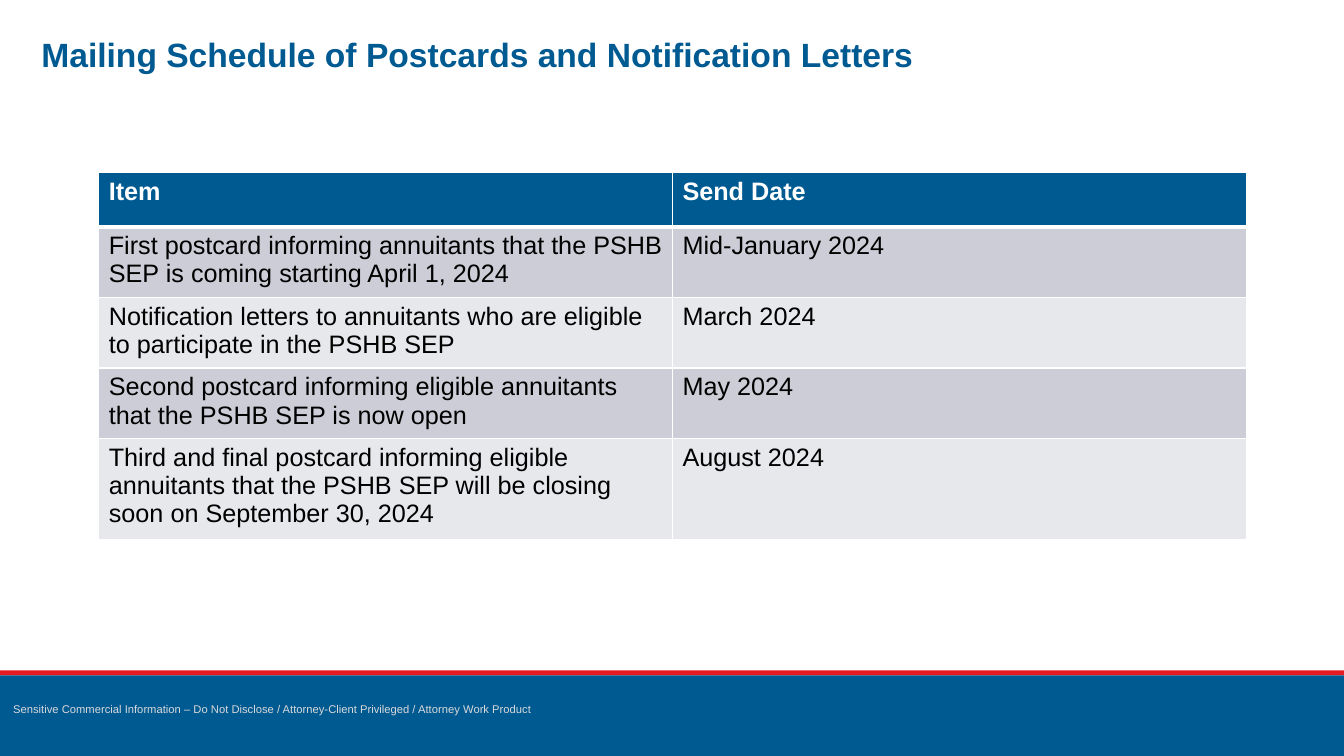
from dataclasses import dataclass

from lxml.etree import SubElement
from pptx import Presentation
from pptx.dml.color import RGBColor
from pptx.enum.shapes import MSO_SHAPE
from pptx.enum.text import MSO_ANCHOR, PP_ALIGN
from pptx.oxml.ns import qn
from pptx.util import Pt

EMU_PER_PX = 9144
SCHEDULE = [
    ("Item", "Send Date"),
    ("First postcard informing annuitants that the PSHB SEP is coming starting April 1, 2024",
     "Mid-January 2024"),
    ("Notification letters to annuitants who are eligible to participate in the PSHB SEP",
     "March 2024"),
    ("Second postcard informing eligible annuitants that the PSHB SEP is now open",
     "May 2024"),
    ("Third and final postcard informing eligible annuitants that the PSHB SEP will be closing "
     "soon on September 30, 2024", "August 2024"),
]
ROW_HEIGHTS = [54, 70, 70, 70, 100]


@dataclass(frozen=True)
class Theme:
    """Colours, font and type sizes of the slide."""

    blue: str = "005A92"
    red: str = "E71921"
    white: str = "FFFFFF"
    black: str = "000000"
    notice: str = "D9D9D9"
    bands: tuple = ("E7E8EC", "CCCDD6")
    font: str = "Arial"
    title_size: int = 24
    table_size: int = 18
    notice_size: int = 8


THEME = Theme()


def px(*lengths):
    """Turn pixel lengths into EMU."""
    return [length * EMU_PER_PX for length in lengths]


def style_text(text_frame, size, color, bold=False, line_spacing=None):
    """Format every run of a text frame."""
    for paragraph in text_frame.paragraphs:
        paragraph.alignment = PP_ALIGN.LEFT
        if line_spacing:
            paragraph.line_spacing = line_spacing
        for run in paragraph.runs:
            run.font.name = THEME.font
            run.font.size = Pt(size)
            run.font.bold = bold
            run.font.color.rgb = RGBColor.from_string(color)


def add_title(slide, left, top, width, height):
    """Place the slide title in its box."""
    title = slide.shapes.title
    title.left, title.top, title.width, title.height = px(left, top, width, height)
    frame = title.text_frame
    frame.text = "Mailing Schedule of Postcards and Notification Letters"
    frame.margin_left = frame.margin_right = frame.margin_top = frame.margin_bottom = 0
    frame.vertical_anchor = MSO_ANCHOR.MIDDLE
    style_text(frame, THEME.title_size, THEME.blue, True, 1.06)


def add_bar(slide, left, top, width, height, color):
    """Draw one plain coloured bar."""
    bar = slide.shapes.add_shape(MSO_SHAPE.RECTANGLE, *px(left, top, width, height))
    bar.shadow.inherit = False
    bar.fill.solid()
    bar.fill.fore_color.rgb = RGBColor.from_string(color)
    bar.line.fill.background()


def add_footer(slide, left, top, width, height):
    """Draw the red rule, blue band and confidentiality notice."""
    rule = 5
    add_bar(slide, left, top, width, rule, THEME.red)
    add_bar(slide, left, top + rule, width, height - rule, THEME.blue)
    notice = slide.shapes.add_textbox(*px(left, top + 23, 602, 26))
    frame = notice.text_frame
    frame.word_wrap = True
    frame.margin_left = px(13)[0]
    frame.text = ("Sensitive Commercial Information – Do Not Disclose / "
                  "Attorney-Client Privileged / Attorney Work Product")
    style_text(frame, THEME.notice_size, THEME.notice, line_spacing=1.3)


def format_cell(cell, fill, borders):
    """Give a cell its side borders and fill."""
    properties = cell._tc.get_or_add_tcPr()
    for side, points in borders.items():
        line = SubElement(properties, qn(f"a:{side}"), w=str(Pt(points)))
        solid = SubElement(line, qn("a:solidFill"))
        SubElement(solid, qn("a:srgbClr"), val=THEME.white)
    cell.fill.solid()
    cell.fill.fore_color.rgb = RGBColor.from_string(fill)


def add_schedule(slide, left, top, width, height):
    """Place the mailing schedule table in its box."""
    frame = slide.shapes.add_table(len(SCHEDULE), 2, *px(left, top, width, height))
    table = frame.table
    for row_index, (texts, row_height) in enumerate(zip(SCHEDULE, ROW_HEIGHTS)):
        header = row_index == 0
        table.rows[row_index].height = px(row_height)[0]
        fill = THEME.blue if header else THEME.bands[row_index % 2]
        borders = {"lnL": 1, "lnR": 1, "lnT": 3 if row_index == 1 else 1,
                   "lnB": 3 if header else 1}
        for cell, text in zip(table.rows[row_index].cells, texts):
            cell.text_frame.text = text
            style_text(cell.text_frame, THEME.table_size,
                       THEME.white if header else THEME.black, header)
            format_cell(cell, fill, borders)


def main():
    """Build and save the mailing schedule slide."""
    presentation = Presentation()
    presentation.slide_width, presentation.slide_height = px(1333, 750)
    slide = presentation.slides.add_slide(presentation.slide_layouts[5])
    add_footer(slide, 0, 665, 1333, 85)
    add_title(slide, 41, 32, 1150, 40)
    add_schedule(slide, 98, 171, 1138, sum(ROW_HEIGHTS))
    presentation.save("out.pptx")


if __name__ == "__main__":
    main()
